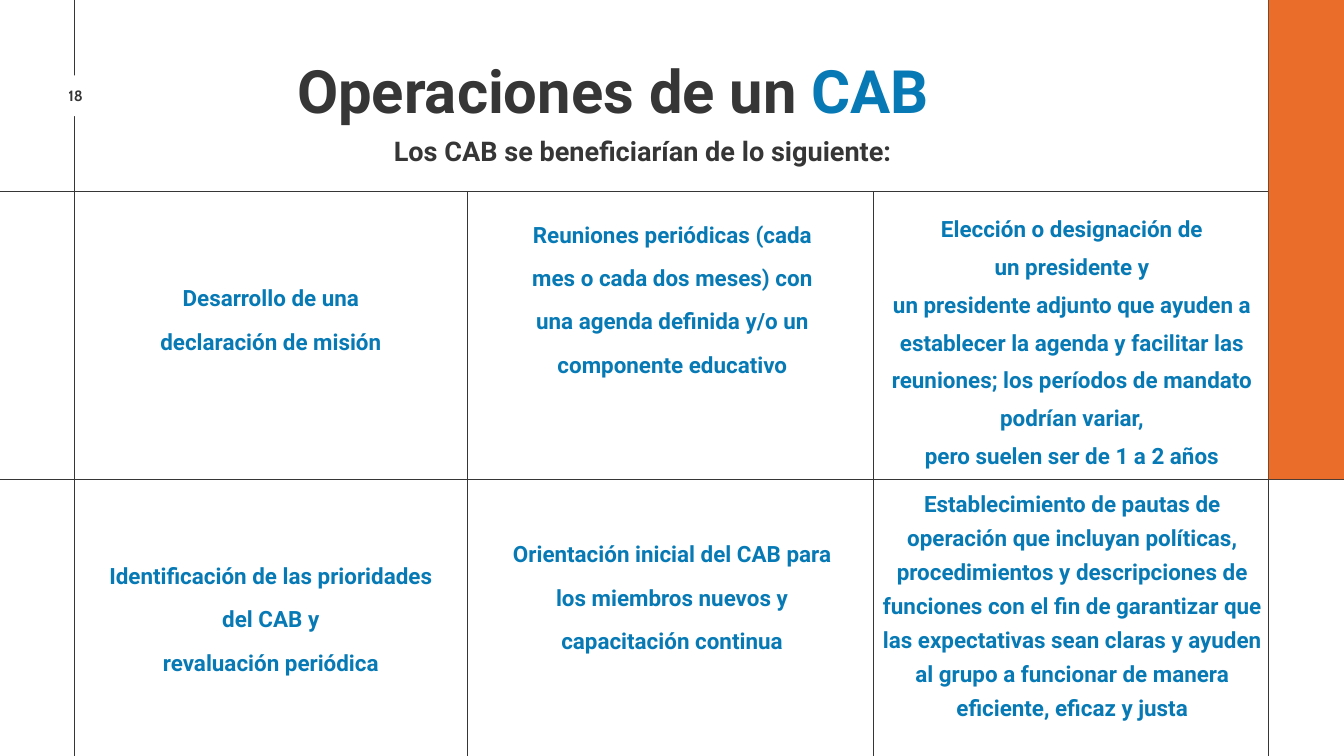
import pptx
import pptx.util
import pptx.dml.color
import pptx.enum.shapes
import pptx.enum.text
import pptx.oxml.ns
import lxml.etree

Inches, Pt = pptx.util.Inches, pptx.util.Pt
Align = pptx.enum.text.PP_ALIGN
COLORS = {"ink": "373636", "blue": "077AB5", "orange": "EA6D29", "white": "FFFFFF"}
WIDE, HIGH = 20, 11.25
LEFT, RIGHT = 1.11, 18.88
TOP, MID = 2.85, 7.13

# Left, top, width, height, line pitch, paragraphs
CELLS = [
    (2.2, 3.99, 3.66, 1.21, 46.4, ["Desarrollo de una declaración de misión"]),
    (7.7, 3.04, 4.61, 3.14, 46.4,
     ["Reuniones periódicas (cada mes o cada dos meses) con una agenda "
      "definida y/o un componente educativo"]),
    (13.09, 3.04, 5.72, 3.86, 40.5,
     ["Elección o designación de\nun presidente y",
      "un presidente adjunto que ayuden a establecer la agenda y facilitar las "
      "reuniones; los períodos de mandato podrían variar,\n"
      "pero suelen ser de 1 a 2 años"]),
    (1.46, 8.12, 5.14, 1.88, 46.4,
     ["Identificación de las prioridades del CAB y", "revaluación periódica"]),
    (7.44, 7.8, 5.12, 1.85, 46.4,
     ["Orientación inicial del CAB para los miembros nuevos y capacitación continua"]),
    (13.11, 7.19, 5.69, 3.99, 36.4,
     ["Establecimiento de pautas de operación que incluyan políticas, "
      "procedimientos y descripciones de funciones con el fin de garantizar que "
      "las expectativas sean claras y ayuden al grupo a funcionar de manera "
      "eficiente, eficaz y justa"]),
]


def rgb(name):
    return pptx.dml.color.RGBColor.from_string(COLORS[name])


class Deck:
    """Holds the style and the current slide."""

    def __init__(self, slide, font="Roboto"):
        self.slide, self.font = slide, font

    def line(self, x1, y1, x2, y2):
        kind = pptx.enum.shapes.MSO_CONNECTOR.STRAIGHT
        rule = self.slide.shapes.add_connector(kind, *map(Inches, (x1, y1, x2, y2)))
        rule.line.color.rgb = rgb("ink")
        rule.line.width = Pt(0.75)
        props = rule.element.find(pptx.oxml.ns.qn("p:spPr"))
        lxml.etree.SubElement(props, pptx.oxml.ns.qn("a:effectLst"))

    def block(self, x, y, w, h, color):
        kind = pptx.enum.shapes.MSO_SHAPE.RECTANGLE
        box = self.slide.shapes.add_shape(kind, *map(Inches, (x, y, w, h)))
        box.fill.solid()
        box.fill.fore_color.rgb = rgb(color)
        box.line.fill.background()
        box.shadow.inherit = False

    def frame(self, shape):
        """Strip margins and fix wrapping and anchoring."""
        body = shape.text_frame
        body.word_wrap = True
        body.auto_size = pptx.enum.text.MSO_AUTO_SIZE.NONE
        body.vertical_anchor = pptx.enum.text.MSO_ANCHOR.TOP
        body.margin_left = body.margin_right = 0
        body.margin_top = body.margin_bottom = 0
        return body

    def style(self, para, size, pitch, color, align, font=None):
        para.alignment = align
        para.line_spacing = Pt(pitch)
        para.space_before = Pt(0)
        para.font.name = font or self.font
        para.font.size = Pt(size)
        para.font.bold = True
        para.font.color.rgb = rgb(color)

    def text(self, x, y, w, h, paras, size, pitch, color="blue",
             align=Align.CENTER, font=None):
        box = self.slide.shapes.add_textbox(*map(Inches, (x, y, w, h)))
        body = self.frame(box)
        for i, words in enumerate(paras):
            para = body.add_paragraph() if i else body.paragraphs[0]
            para.text = words
            self.style(para, size, pitch, color, align, font)

    def title(self, x, y, w, h, parts, size, pitch):
        head = self.slide.shapes.title
        head.left, head.top, head.width, head.height = map(Inches, (x, y, w, h))
        para = self.frame(head).paragraphs[0]
        self.style(para, size, pitch, "ink", Align.LEFT)
        for words, color in parts:
            run = para.add_run()
            run.text = words
            run.font.color.rgb = rgb(color)


def main():
    prs = pptx.Presentation()
    prs.slide_width, prs.slide_height = Inches(WIDE), Inches(HIGH)
    deck = Deck(prs.slides.add_slide(prs.slide_layouts[5]))

    for x, y in ((LEFT, 0), (6.96, TOP), (13, TOP), (RIGHT, 0)):
        deck.line(x, y, x, HIGH)
    for y in (TOP, MID):
        deck.line(0, y, WIDE, y)
    deck.block(RIGHT, 0, WIDE - RIGHT, MID, "orange")

    deck.block(0.69, 1.12, 0.86, 0.61, "white")
    deck.text(0.76, 1.31, 0.73, 0.25, ["18"], 16, 17.6, "ink", font="Cabin")

    deck.title(4.42, 0.89, 10.8, 1,
               [("Operaciones de un ", "ink"), ("CAB", "blue")], 64, 70.4)
    deck.text(5.86, 1.84, 8.57, 0.58, ["Los CAB se beneficiarían de lo siguiente:"],
              29, 46.4, "ink", Align.LEFT)
    for x, y, w, h, pitch, paras in CELLS:
        deck.text(x, y, w, h, paras, 24, pitch)

    prs.save("out.pptx")


if __name__ == "__main__":
    main()
